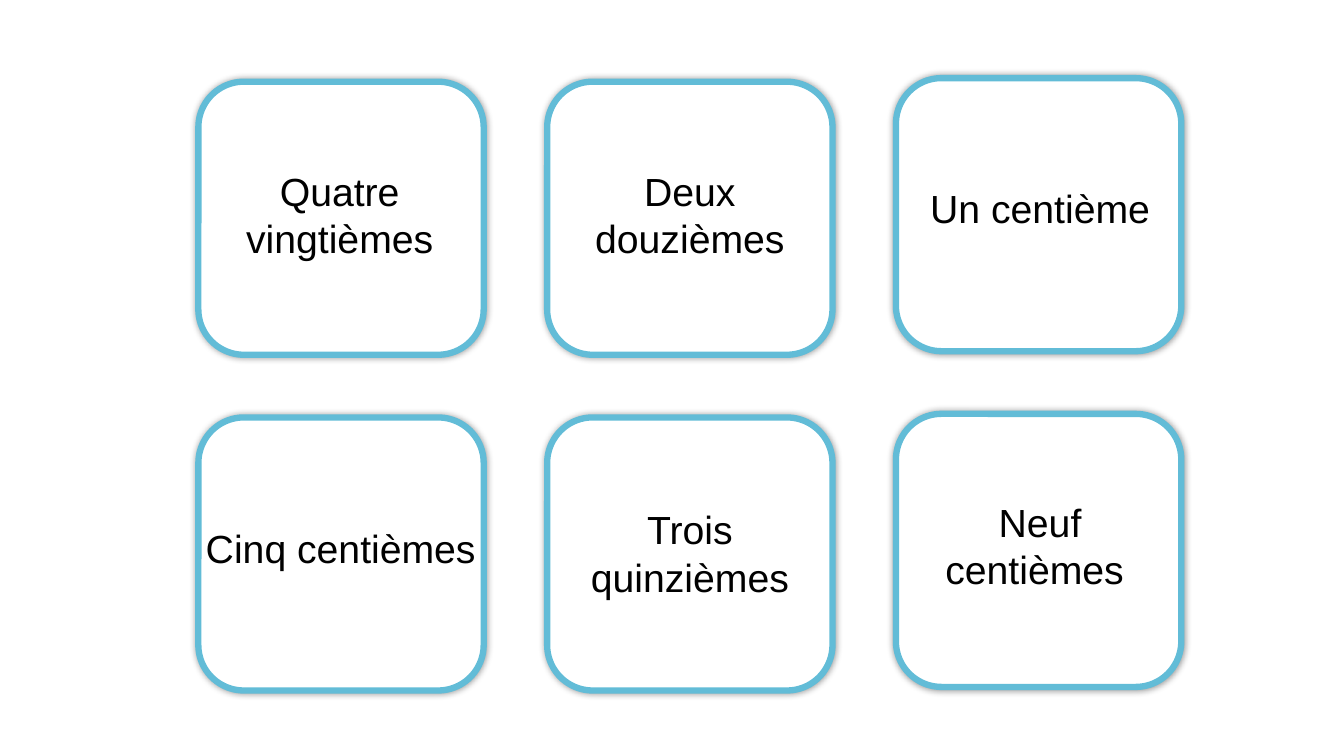
from dataclasses import dataclass

from lxml import etree
from pptx import Presentation
from pptx.dml.color import RGBColor
from pptx.enum.shapes import MSO_SHAPE
from pptx.enum.text import MSO_AUTO_SIZE, PP_ALIGN
from pptx.oxml.ns import qn
from pptx.util import Cm, Pt

ROUND = MSO_SHAPE.ROUNDED_RECTANGLE
GROW = MSO_AUTO_SIZE.SHAPE_TO_FIT_TEXT
CENTER = PP_ALIGN.CENTER


@dataclass(frozen=True)
class Theme:
    font: str = "Arial"
    size: int = 28
    ink: str = "000000"
    fill: str = "FFFFFF"
    edge: str = "62BCD7"
    width: float = 4.5
    blur: int = 5
    alpha: int = 40


class Deck:
    def __init__(self, theme, slide):
        self.theme = theme
        self.slide = slide

    def card(self, left, top, width, height):
        theme = self.theme
        card = self.slide.shapes.add_shape(
            ROUND, Cm(left), Cm(top), Cm(width), Cm(height))
        card.fill.solid()
        card.fill.fore_color.rgb = RGBColor.from_string(theme.fill)
        card.line.color.rgb = RGBColor.from_string(theme.edge)
        card.line.width = Pt(theme.width)
        self.glow(card)

    def glow(self, card):
        theme = self.theme
        card.shadow.inherit = False
        effects = card._element.spPr.find(qn("a:effectLst"))
        shade = etree.SubElement(
            effects, qn("a:outerShdw"), blurRad=str(Pt(theme.blur)),
            dist="0", dir="0", algn="ctr", rotWithShape="0")
        color = etree.SubElement(shade, qn("a:srgbClr"), val=theme.ink)
        etree.SubElement(color, qn("a:alpha"), val=str(theme.alpha * 1000))

    def label(self, text, left, top, width, height):
        theme = self.theme
        box = self.slide.shapes.add_textbox(
            Cm(left), Cm(top), Cm(width), Cm(height))
        frame = box.text_frame
        frame.word_wrap = True
        frame.auto_size = GROW
        frame.text = text
        para = frame.paragraphs[0]
        para.alignment = CENTER
        font = para.runs[0].font
        font.name = theme.font
        font.size = Pt(theme.size)
        font.color.rgb = RGBColor.from_string(theme.ink)


LEFT, TOP = 5, 2.06
WIDE, HIGH = 7.19, 6.88
STEP_X, STEP_Y = 8.79, 8.46
LIFTS = (0, 0, 0.09)
ONE, TWO = 1.45, 2.64
LABELS = (
    ("Deux douzièmes", 13.79, 4.09, 7.19, TWO),
    ("Un centième", 22.58, 4.52, 7.26, ONE),
    ("Cinq centièmes", 4.9, 13.08, 7.37, ONE),
    ("Trois quinzièmes", 13.51, 12.62, 7.75, TWO),
    ("Neuf centièmes ", 22.58, 12.42, 7.26, TWO),
    ("Quatre vingtièmes", 4.93, 4.09, 7.26, TWO),
)


def main():
    prs = Presentation()
    prs.slide_width = Cm(33.87)
    prs.slide_height = Cm(19.05)
    deck = Deck(Theme(), prs.slides.add_slide(prs.slide_layouts[6]))
    for row in range(2):
        for col, lift in enumerate(LIFTS):
            deck.card(LEFT + col * STEP_X, TOP + row * STEP_Y - lift,
                      WIDE, HIGH)
    for label in LABELS:
        deck.label(*label)
    prs.save("out.pptx")


if __name__ == "__main__":
    main()
